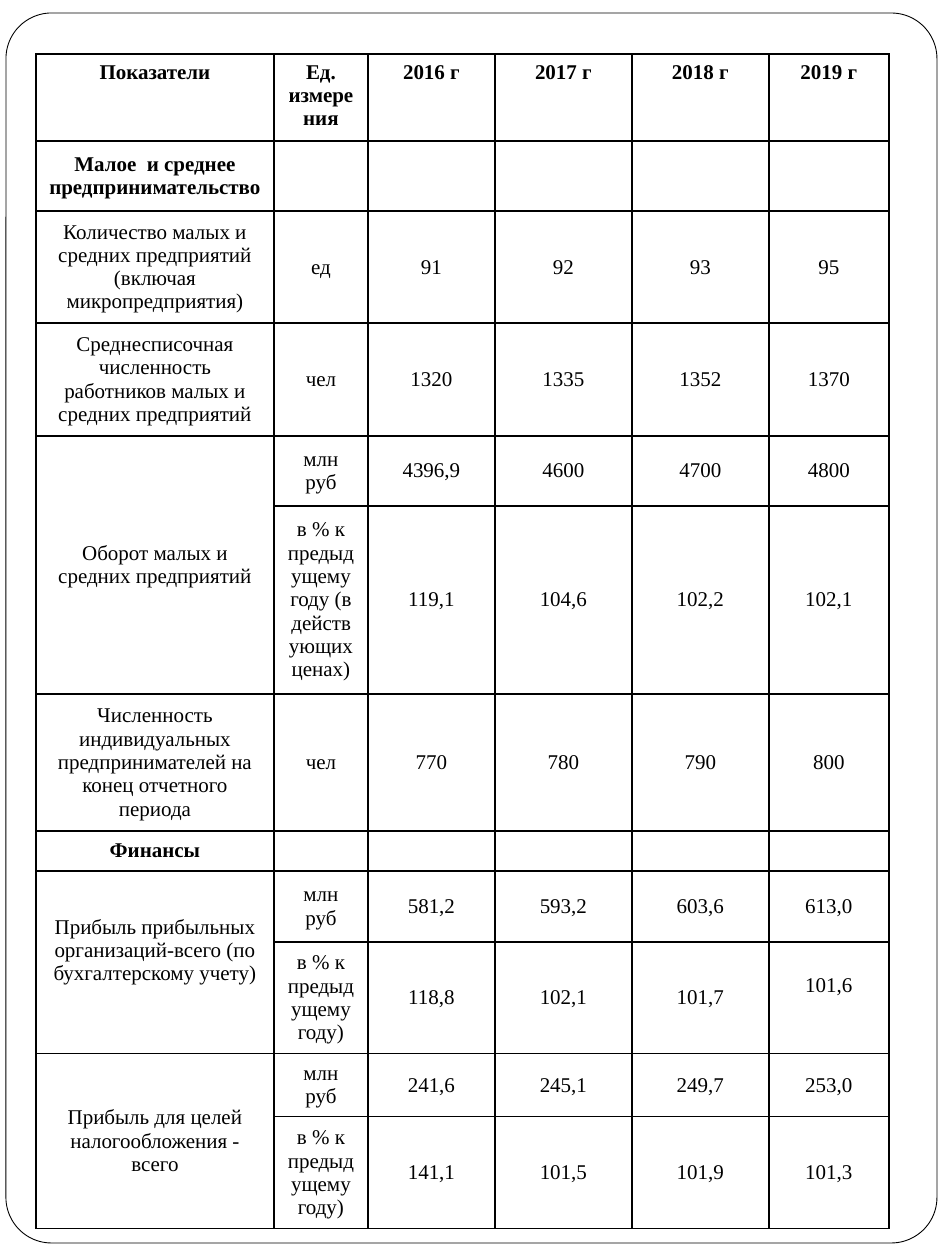
import pptx
import pptx.util
import pptx.dml.color
import pptx.enum.shapes
import pptx.enum.text
import pptx.oxml.ns
import lxml.etree

BLACK = pptx.dml.color.RGBColor(0, 0, 0)
WHITE = pptx.dml.color.RGBColor(255, 255, 255)
DPI = 126

COLS = [238, 94, 127, 137, 137, 120]
HEIGHTS = [87, 70, 112, 113, 70, 188, 137, 40, 71, 112, 63, 112]
ROWS = [
    ["Показатели", "Ед. измерения", "2016 г", "2017 г", "2018 г", "2019 г"],
    ["Малое  и среднее предпринимательство"],
    ["Количество малых и средних предприятий (включая микропредприятия)",
     "ед", "91", "92", "93", "95"],
    ["Среднесписочная численность работников малых и средних предприятий",
     "чел", "1320", "1335", "1352", "1370"],
    ["Оборот малых и средних предприятий",
     "млн руб", "4396,9", "4600", "4700", "4800"],
    ["", "в % к предыдущему году (в действующих ценах)",
     "119,1", "104,6", "102,2", "102,1"],
    ["Численность индивидуальных предпринимателей на конец отчетного периода",
     "чел", "770", "780", "790", "800"],
    ["Финансы"],
    ["Прибыль прибыльных организаций-всего (по бухгалтерскому учету)",
     "млн руб", "581,2", "593,2", "603,6", "613,0"],
    ["", "в % к предыдущему году)", "118,8", "102,1", "101,7", "101,6"],
    ["Прибыль для целей налогообложения - всего",
     "млн руб", "241,6", "245,1", "249,7", "253,0"],
    ["", "в % к предыдущему году)", "141,1", "101,5", "101,9", "101,3"],
]
HEADS = {0, 1, 7}
SPANS = [4, 8, 10]
RAISED = [(8, 0), (9, 5)]


def px(num):
    return pptx.util.Emu(round(num * 914400 / DPI))


class Page:
    font = "Times New Roman"
    size = 12

    def __init__(self, deck):
        self.slide = deck.slides.add_slide(deck.slide_layouts[6])

    def frame(self, left, top, width, height):
        box = self.slide.shapes.add_shape(
            pptx.enum.shapes.MSO_SHAPE.ROUNDED_RECTANGLE,
            px(left), px(top), px(width), px(height))
        box.adjustments[0] = 0.049
        box.shadow.inherit = False
        box.fill.solid()
        box.fill.fore_color.rgb = WHITE
        box.line.color.rgb = BLACK
        box.line.width = pptx.util.Pt(0.5)

    def table(self, left, top, cols, heights, rows):
        grid = self.slide.shapes.add_table(
            len(rows), len(cols), px(left), px(top),
            px(sum(cols)), px(sum(heights))).table
        for col, width in zip(grid.columns, cols):
            col.width = px(width)
        for row, height in zip(grid.rows, heights):
            row.height = px(height)
        for r, texts in enumerate(rows):
            for c in range(len(cols)):
                text = texts[c] if c < len(texts) else ""
                self.cell(grid.cell(r, c), text, r in HEADS, r == 0)
        return grid

    def cell(self, cell, text, bold, top):
        anchor = pptx.enum.text.MSO_ANCHOR
        cell.vertical_anchor = anchor.TOP if top else anchor.MIDDLE
        self.border(cell)
        cell.fill.solid()
        cell.fill.fore_color.rgb = WHITE
        cell.text_frame.text = text
        para = cell.text_frame.paragraphs[0]
        para.alignment = pptx.enum.text.PP_ALIGN.CENTER
        for run in para.runs:
            run.font.name = self.font
            run.font.size = pptx.util.Pt(self.size)
            run.font.bold = bold
            run.font.color.rgb = BLACK
        if not text:
            # An empty cell still needs the small size, or its row grows.
            end = lxml.etree.SubElement(
                para._p, pptx.oxml.ns.qn("a:endParaRPr"))
            end.set("sz", str(self.size * 100))

    def border(self, cell):
        props = cell._tc.get_or_add_tcPr()
        for side in ("a:lnL", "a:lnR", "a:lnT", "a:lnB"):
            line = lxml.etree.SubElement(props, pptx.oxml.ns.qn(side))
            line.set("w", str(pptx.util.Pt(1)))
            fill = lxml.etree.SubElement(line, pptx.oxml.ns.qn("a:solidFill"))
            tint = lxml.etree.SubElement(fill, pptx.oxml.ns.qn("a:srgbClr"))
            tint.set("val", str(BLACK))


def main():
    deck = pptx.Presentation()
    deck.slide_width = px(945)
    deck.slide_height = px(1260)
    page = Page(deck)
    page.frame(6, 13, 931, 1230)
    grid = page.table(36, 54, COLS, HEIGHTS, ROWS)
    for r in SPANS:
        grid.cell(r, 0).merge(grid.cell(r + 1, 0))
    for r, c in RAISED:
        grid.cell(r, c).margin_bottom = px(30)
    deck.save("out.pptx")


if __name__ == "__main__":
    main()
